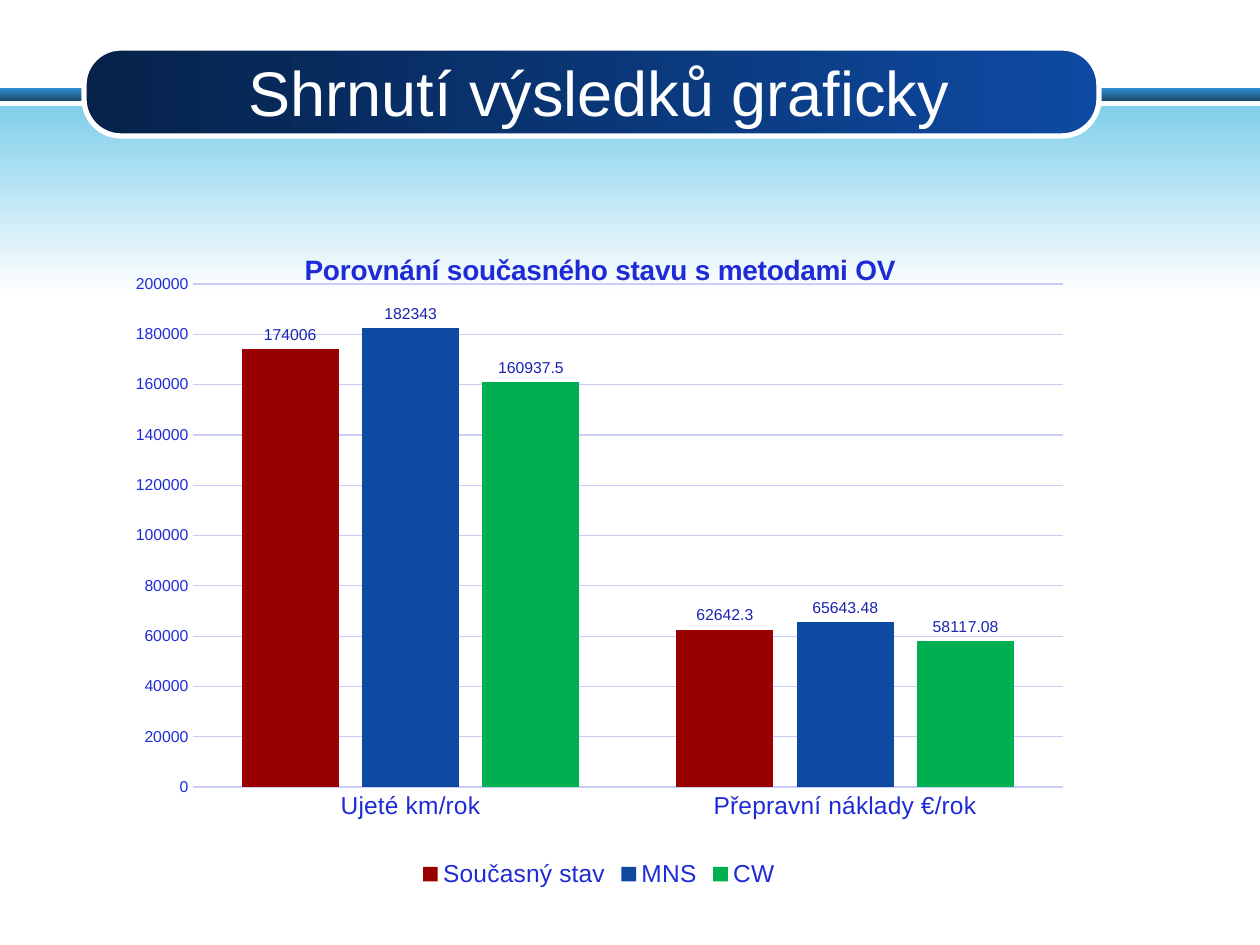
import pptx
import pptx.chart.data
import pptx.dml.color
import pptx.enum.chart
import pptx.enum.shapes
import pptx.enum.text
import pptx.oxml
import pptx.oxml.ns
import pptx.util

RGB = pptx.dml.color.RGBColor
Pt = pptx.util.Pt
WHITE = RGB(0xFF, 0xFF, 0xFF)
SKY = RGB(0x81, 0xCF, 0xEB)
STRIPE_TOP = RGB(0x31, 0x91, 0xD3)
STRIPE_BOTTOM = RGB(0x19, 0x49, 0x69)
NAVY = RGB(0x06, 0x22, 0x4A)
BLUE = RGB(0x0E, 0x4A, 0xA2)
RED = RGB(0x99, 0x00, 0x00)
GREEN = RGB(0x00, 0xB0, 0x50)
CHART_TEXT = RGB(0x0D, 0x12, 0x59)
AXIS_TEXT = RGB(0x1F, 0x2B, 0xD6)
LABEL_TEXT = RGB(0x1A, 0x24, 0xB2)
GRID = RGB(0xCA, 0xCD, 0xF7)

FONT = "Arial"
EMU_PER_PX = 914400 / 126
SLIDE_WIDTH, SLIDE_HEIGHT = 1260, 945

CATEGORIES = ["Ujeté km/rok", "Přepravní náklady €/rok"]
SERIES = [
    ("Současný stav", [174006, 62642.3], RED),
    ("MNS", [182343, 65643.48], BLUE),
    ("CW", [160937.5, 58117.08], GREEN),
]


def emu(px):
    return pptx.util.Emu(round(px * EMU_PER_PX))


def format_font(font, size, color, bold=False):
    values = {"name": FONT, "size": Pt(size), "bold": bold}
    for attribute, value in values.items():
        setattr(font, attribute, value)
    font.color.rgb = color


def add_gradient_shape(slide, kind, box, colors, angle):
    shape = slide.shapes.add_shape(kind, *map(emu, box))
    shape.shadow.inherit = False
    shape.fill.gradient()
    shape.fill.gradient_angle = angle
    for stop, color in zip(shape.fill.gradient_stops, colors):
        stop.color.rgb = color
    shape.line.fill.background()
    return shape


def add_header(slide, box):
    """Draw the stripe, the fading sky and the title pill."""
    left, top, width, height = box
    rectangle = pptx.enum.shapes.MSO_SHAPE.RECTANGLE
    add_gradient_shape(slide, rectangle, (left, top + 40, width, 13),
                       (STRIPE_TOP, STRIPE_BOTTOM), 270)
    add_gradient_shape(slide, rectangle, (left, top + 58, width, height - 58),
                       (SKY, WHITE), 270)
    pill = add_gradient_shape(
        slide, pptx.enum.shapes.MSO_SHAPE.ROUNDED_RECTANGLE,
        (left + 84, top, 1015, 88), (NAVY, BLUE), 0)
    pill.adjustments[0] = 0.42
    pill.line.color.rgb = WHITE
    pill.line.width = Pt(3)

    title = slide.shapes.title
    title.element.getparent().append(title.element)  # in front of the pill
    place = {"left": left + 116, "top": top + 4, "width": 966, "height": 78}
    for attribute, value in place.items():
        setattr(title, attribute, emu(value))
    title.text_frame.text = "Shrnutí výsledků graficky"
    title.text_frame.vertical_anchor = pptx.enum.text.MSO_ANCHOR.MIDDLE
    paragraph = title.text_frame.paragraphs[0]
    paragraph.alignment = pptx.enum.text.PP_ALIGN.CENTER
    format_font(paragraph.runs[0].font, 36, WHITE)


def manual_layout(target="", **fractions):
    """Return a c:layout element for fractions of the chart space."""
    modes = '<c:xMode val="edge"/><c:yMode val="edge"/>'
    sizes = "".join(f'<c:{name} val="{value}"/>' for name, value in fractions.items())
    return pptx.oxml.parse_xml(
        f'<c:layout {pptx.oxml.ns.nsdecls("c")}><c:manualLayout>'
        f"{target}{modes}{sizes}</c:manualLayout></c:layout>")


def set_layout(parent, layout, position):
    for old in parent.findall(pptx.oxml.ns.qn("c:layout")):
        parent.remove(old)
    parent.insert(position, layout)


def format_axes(chart):
    no_tick = pptx.enum.chart.XL_TICK_MARK.NONE
    for axis, size in ((chart.category_axis, 14), (chart.value_axis, 9)):
        axis.major_tick_mark = axis.minor_tick_mark = no_tick
        format_font(axis.tick_labels.font, size, AXIS_TEXT)
    base = chart.category_axis.format.line
    base.color.rgb = GRID
    base.width = Pt(1)

    scale = {"minimum_scale": 0, "maximum_scale": 200000,
             "major_unit": 20000, "has_major_gridlines": True}
    for attribute, value in scale.items():
        setattr(chart.value_axis, attribute, value)
    chart.value_axis.format.line.fill.background()
    gridline = chart.value_axis.major_gridlines.format.line
    gridline.color.rgb = GRID
    gridline.width = Pt(0.75)


def add_comparison_chart(slide, box):
    data = pptx.chart.data.CategoryChartData()
    data.categories = CATEGORIES
    for name, values, _ in SERIES:
        data.add_series(name, values)
    chart = slide.shapes.add_chart(
        pptx.enum.chart.XL_CHART_TYPE.COLUMN_CLUSTERED, *map(emu, box), data).chart
    format_font(chart.font, 10, CHART_TEXT)

    chart.has_title = True
    heading = chart.chart_title.text_frame
    heading.text = "Porovnání současného stavu s metodami OV"
    format_font(heading.paragraphs[0].runs[0].font, 16, AXIS_TEXT, bold=True)
    chart.chart_title.include_in_layout = False
    set_layout(chart.chart_title.format.element if hasattr(chart.chart_title.format, "element")
               else chart.chart_title.element, manual_layout(x=0.19, y=0.04), 1)

    format_axes(chart)

    plot = chart.plots[0]
    for attribute, value in {"gap_width": 100, "overlap": -24,
                             "vary_by_categories": False}.items():
        setattr(plot, attribute, value)
    for series, (_, _, color) in zip(plot.series, SERIES):
        series.format.fill.solid()
        series.format.fill.fore_color.rgb = color
        labels = series.data_labels
        labels.show_value = True
        labels.position = pptx.enum.chart.XL_LABEL_POSITION.OUTSIDE_END
        format_font(labels.font, 9, LABEL_TEXT)
    plot_area = chart.element.find(".//" + pptx.oxml.ns.qn("c:plotArea"))
    set_layout(plot_area, manual_layout('<c:layoutTarget val="inner"/>',
                                        x=0.08, y=0.095, w=0.9, h=0.748), 0)

    chart.has_legend = True
    chart.legend.position = pptx.enum.chart.XL_LEGEND_POSITION.BOTTOM
    chart.legend.include_in_layout = False
    format_font(chart.legend.font, 14, AXIS_TEXT)


def main():
    presentation = pptx.Presentation()
    presentation.slide_width = emu(SLIDE_WIDTH)
    presentation.slide_height = emu(SLIDE_HEIGHT)
    slide = presentation.slides.add_slide(presentation.slide_layouts[5])
    add_header(slide, (0, 48, SLIDE_WIDTH, 246))
    add_comparison_chart(slide, (116, 220, 966, 673))
    presentation.save("out.pptx")


if __name__ == "__main__":
    main()
